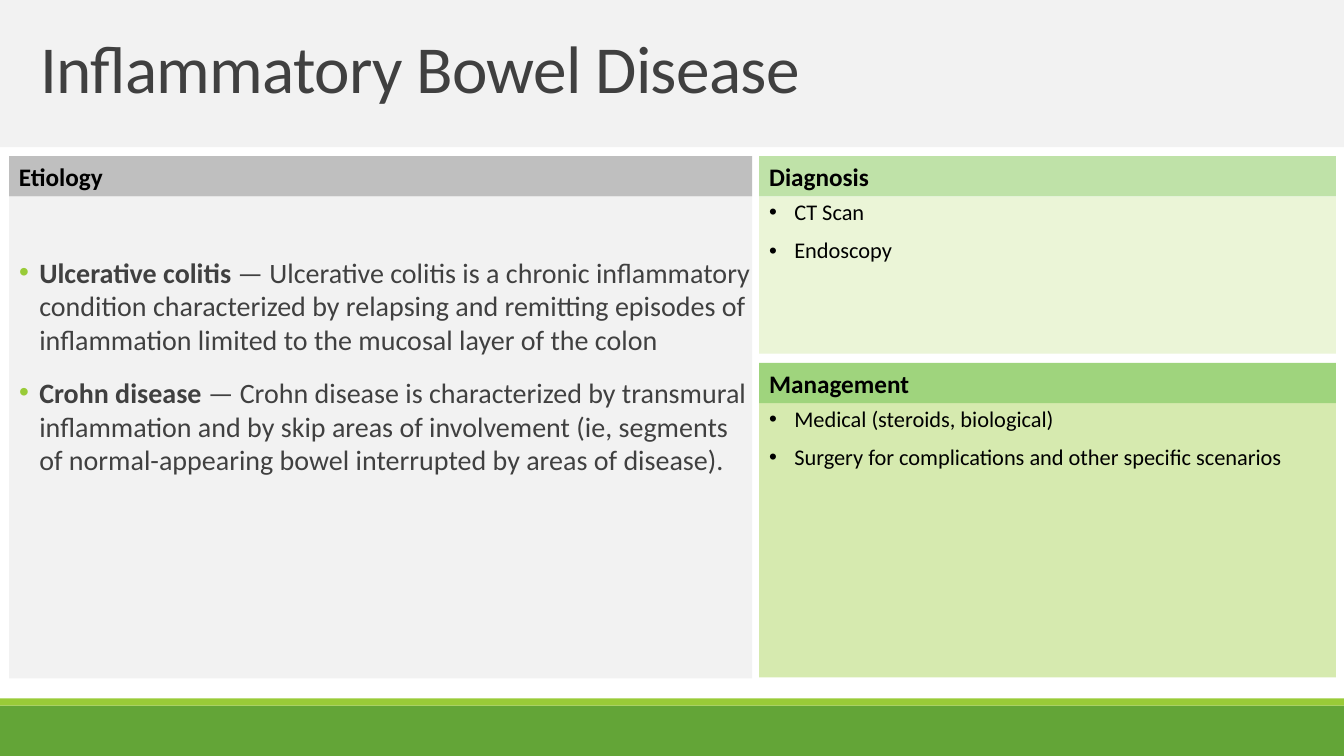
from dataclasses import dataclass

from lxml.etree import SubElement
from pptx import Presentation
from pptx.dml.color import RGBColor
from pptx.enum.shapes import MSO_SHAPE
from pptx.enum.text import MSO_ANCHOR, PP_ALIGN
from pptx.oxml.ns import qn
from pptx.util import Emu, Pt

SCALE = 9144  # EMU in one px, 100 px to the inch
WIDE, HIGH = 1333, 750
HEAD = 40  # height of a panel heading
FONT = "Calibri"
INK = {
    "black": "000000", "text": "404040", "pale": "F2F2F2", "grey": "BFBFBF",
    "green": "63A537", "lime": "99CB38",
    "mint": "BFE2A8", "leaf": "9FD47D", "cream": "EBF5D7", "moss": "D6EAAF",
}


@dataclass
class Style:
    """Format of the list inside a panel."""
    size: int
    color: str
    bullet: str
    hang: int
    margin: int
    line: float
    before: int
    after: int
    inset: tuple[int, int, int, int]


@dataclass
class Panel:
    """A heading strip above a filled box with a list."""
    title: str
    left: int
    top: int
    width: int
    height: int
    strip: str
    fill: str
    style: Style
    items: list[tuple[str, str]]  # bold lead, plain rest


def px(num: int) -> Emu:
    return Emu(num * SCALE)


def tint(name: str) -> RGBColor:
    return RGBColor.from_string(INK[name])


def add_box(slide, left: int, top: int, width: int, height: int, fill: str):
    box = slide.shapes.add_shape(
        MSO_SHAPE.RECTANGLE, px(left), px(top), px(width), px(height))
    box.shadow.inherit = False
    box.fill.solid()
    box.fill.fore_color.rgb = tint(fill)
    box.line.fill.background()
    return box


def set_frame(box, anchor=MSO_ANCHOR.TOP, inset=(10, 5, 10, 5)):
    frame = box.text_frame
    frame.word_wrap = True
    frame.vertical_anchor = anchor
    (frame.margin_left, frame.margin_top,
     frame.margin_right, frame.margin_bottom) = map(px, inset)
    return frame


def add_text(para, text: str, *, size: int, color: str = "black",
             bold: bool = False, track: int = 0) -> None:
    para.alignment = PP_ALIGN.LEFT
    run = para.add_run()
    run.text = text
    run.font.name = FONT
    run.font.size = Pt(size)
    run.font.bold = bold
    run.font.color.rgb = tint(color)
    if track:
        run._r.get_or_add_rPr().set("spc", str(track))


def set_indent(para, margin: int, first: int):
    props = para._p.get_or_add_pPr()
    props.set("marL", str(px(margin)))
    props.set("indent", str(px(first)))
    return props


def add_bullet(para, style: Style) -> None:
    props = set_indent(para, style.margin, -style.hang)
    shade = SubElement(props, qn("a:buClr"))
    SubElement(shade, qn("a:srgbClr")).set("val", INK[style.bullet])
    SubElement(props, qn("a:buFont")).set("typeface", "Arial")
    SubElement(props, qn("a:buChar")).set("char", "•")


def add_list(frame, style: Style, items: list[tuple[str, str]]) -> None:
    for num, (lead, rest) in enumerate(items):
        para = frame.add_paragraph() if num else frame.paragraphs[0]
        add_bullet(para, style)
        para.line_spacing = style.line
        para.space_before = Pt(style.before if num else 0)
        para.space_after = Pt(style.after)
        for text, bold in ((lead, True), (rest, False)):
            if text:
                add_text(para, text, size=style.size,
                         color=style.color, bold=bold)


def add_panel(slide, panel: Panel) -> None:
    body = add_box(slide, panel.left, panel.top + HEAD, panel.width,
                   panel.height - HEAD, panel.fill)
    add_list(set_frame(body, inset=panel.style.inset),
             panel.style, panel.items)
    strip = add_box(slide, panel.left, panel.top, panel.width, HEAD,
                    panel.strip)
    add_text(set_frame(strip, MSO_ANCHOR.MIDDLE).paragraphs[0],
             panel.title, size=18, bold=True)


def add_title(slide, text: str) -> None:
    box = add_box(slide, 0, -1, WIDE, 147, "pale")
    para = set_frame(box, MSO_ANCHOR.MIDDLE).paragraphs[0]
    set_indent(para, 0, 30)
    para.line_spacing = 0.85
    add_text(para, text, size=48, color="text", track=-50)


LONG = Style(20, "text", "lime", 20, 30, 1.0, 12, 2, (0, 58, 0, 5))
SHORT = Style(16, "black", "black", 25, 25, 0.9, 10, 0, (10, 5, 10, 5))

PANELS = [
    Panel("Etiology", 9, 155, 737, 518, "grey", "pale", LONG, [
        ("Ulcerative colitis",
         " — Ulcerative colitis is a chronic inflammatory condition "
         "characterized by relapsing and remitting episodes of "
         "inflammation limited to the mucosal layer of the colon"),
        ("Crohn disease",
         " — Crohn disease is characterized by transmural inflammation "
         "and by skip areas of involvement (ie, segments of "
         "normal-appearing bowel interrupted by areas of disease)."),
    ]),
    Panel("Diagnosis", 753, 155, 572, 196, "mint", "cream", SHORT, [
        ("", "CT Scan"),
        ("", "Endoscopy"),
    ]),
    Panel("Management", 753, 360, 572, 312, "leaf", "moss", SHORT, [
        ("", "Medical (steroids, biological)"),
        ("", "Surgery for complications and other specific scenarios"),
    ]),
]


def main() -> None:
    deck = Presentation()
    deck.slide_width, deck.slide_height = px(WIDE), px(HIGH)
    slide = deck.slides.add_slide(deck.slide_layouts[6])

    # Footer bands
    add_box(slide, 0, 700, WIDE, 50, "green")
    add_box(slide, 0, 693, WIDE, 7, "lime")

    # Title and panels
    add_title(slide, "Inflammatory Bowel Disease")
    for panel in PANELS:
        add_panel(slide, panel)

    deck.save("out.pptx")


if __name__ == "__main__":
    main()
